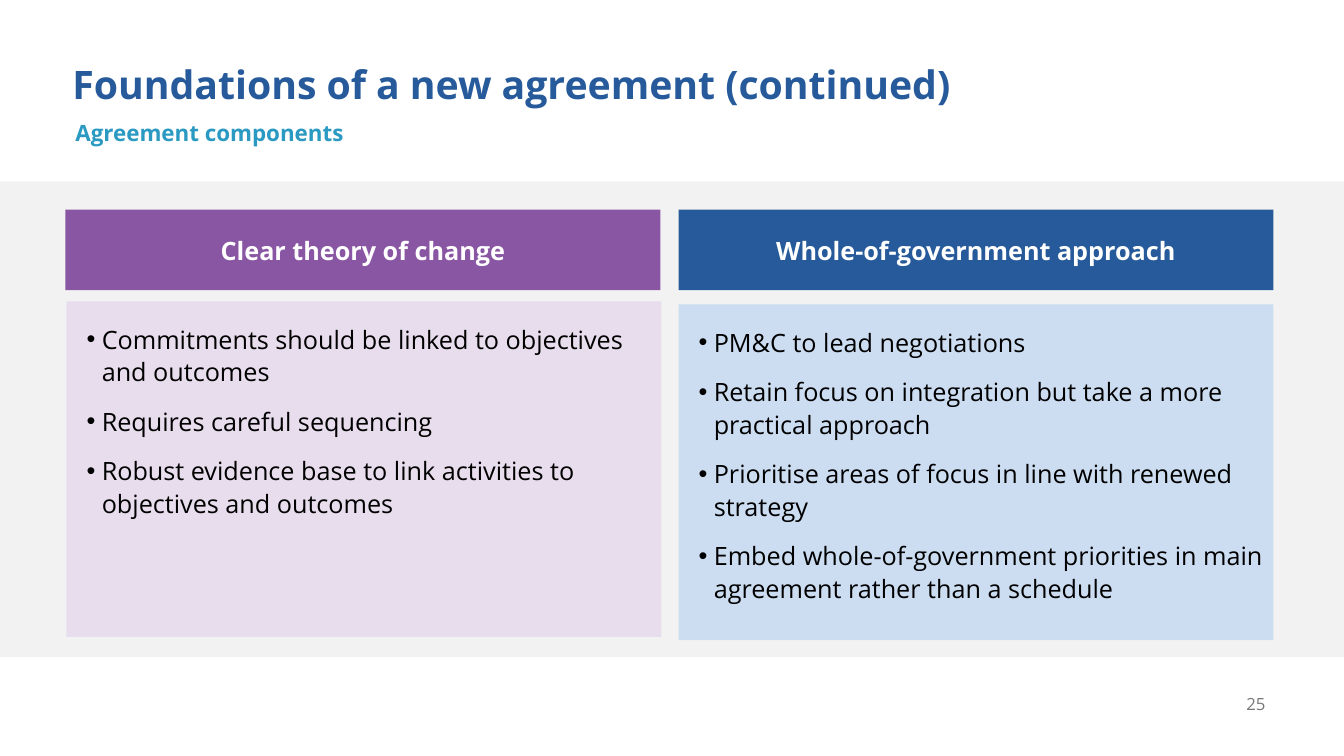
from dataclasses import dataclass

from lxml import etree
from pptx import Presentation
from pptx.dml.color import RGBColor
from pptx.enum.shapes import MSO_SHAPE
from pptx.enum.text import MSO_ANCHOR, PP_ALIGN
from pptx.oxml.ns import qn
from pptx.shapes.autoshape import Shape
from pptx.slide import Slide
from pptx.util import Pt

EMU_PER_PX = 9144  # 100 px to the inch
FONT = "Open Sans"
RECTANGLE = MSO_SHAPE.RECTANGLE
TOP, MIDDLE, BOTTOM = MSO_ANCHOR.TOP, MSO_ANCHOR.MIDDLE, MSO_ANCHOR.BOTTOM
LEFT, CENTER, RIGHT = PP_ALIGN.LEFT, PP_ALIGN.CENTER, PP_ALIGN.RIGHT

WHITE = RGBColor(0xFF, 0xFF, 0xFF)
BLACK = RGBColor(0x00, 0x00, 0x00)
LIGHT_GREY = RGBColor(0xF2, 0xF2, 0xF2)
GREY = RGBColor(0x79, 0x79, 0x79)
BLUE = RGBColor(0x26, 0x5A, 0x9A)
PALE_BLUE = RGBColor(0xCC, 0xDD, 0xF2)
PURPLE = RGBColor(0x89, 0x56, 0xA3)
PALE_PURPLE = RGBColor(0xE8, 0xDD, 0xED)
TEAL = RGBColor(0x2B, 0x9A, 0xC2)

SLIDE_WIDTH, SLIDE_HEIGHT = 1333, 750
COLUMN_WIDTH = 590
HEADER_TOP, HEADER_HEIGHT = 208, 80
BODY_HEIGHT = 333
BULLET_INDENT = 15


@dataclass(frozen=True)
class Box:
    left: int
    top: int
    width: int
    height: int

    def emu(self) -> tuple[int, int, int, int]:
        return px(self.left), px(self.top), px(self.width), px(self.height)


@dataclass(frozen=True)
class Label:
    text: str
    box: Box
    size: int
    color: RGBColor
    bold: bool = True
    align: PP_ALIGN = LEFT
    anchor: MSO_ANCHOR = TOP
    line_spacing: float = 1.0


@dataclass(frozen=True)
class Component:
    heading: str
    points: tuple[str, ...]
    header_left: int
    body_left: int
    body_top: int
    header_fill: RGBColor
    body_fill: RGBColor


LABELS = (
    Label("Foundations of a new agreement (continued)", Box(62, 56, 1212, 56),
          28, BLUE, anchor=BOTTOM, line_spacing=0.9),
    Label("Agreement components", Box(65, 116, 1212, 44), 16, TEAL, line_spacing=0.9),
    Label("25", Box(1189, 678, 76, 40), 12, GREY, bold=False, align=RIGHT, anchor=MIDDLE),
)

COMPONENTS = (
    Component(
        "Clear theory of change",
        (
            "Commitments should be linked to objectives and outcomes",
            "Requires careful sequencing",
            "Robust evidence base to link activities to objectives and outcomes",
        ),
        65, 66, 299, PURPLE, PALE_PURPLE,
    ),
    Component(
        "Whole-of-government approach",
        (
            "PM&C to lead negotiations",
            "Retain focus on integration but take a more practical approach",
            "Prioritise areas of focus in line with renewed strategy",
            "Embed whole-of-government priorities in main agreement rather than a schedule",
        ),
        673, 673, 302, BLUE, PALE_BLUE,
    ),
)


def px(length: int) -> int:
    return length * EMU_PER_PX


def add_panel(slide: Slide, box: Box, fill: RGBColor) -> Shape:
    panel = slide.shapes.add_shape(RECTANGLE, *box.emu())
    panel.shadow.inherit = False
    panel.fill.solid()
    panel.fill.fore_color.rgb = fill
    panel.line.fill.background()
    return panel


def write_label(shape: Shape, label: Label) -> None:
    frame = shape.text_frame
    frame.word_wrap = True
    frame.vertical_anchor = label.anchor
    frame.text = label.text
    paragraph = frame.paragraphs[0]
    paragraph.alignment = label.align
    paragraph.line_spacing = label.line_spacing
    style_font(paragraph.font, label.size, label.color, label.bold)


def style_font(font, size: int, color: RGBColor, bold: bool) -> None:
    font.name = FONT
    font.size = Pt(size)
    font.bold = bold
    font.color.rgb = color


def write_points(shape: Shape, points: tuple[str, ...]) -> None:
    frame = shape.text_frame
    frame.word_wrap = True
    frame.vertical_anchor = TOP
    frame.margin_left = frame.margin_top = px(20)
    frame.margin_right, frame.margin_bottom = px(10), px(5)
    frame.text = "\n".join(points)
    for paragraph in frame.paragraphs:
        paragraph.alignment = LEFT
        paragraph.line_spacing = 1.08
        paragraph.space_after = Pt(12)
        properties = paragraph._p.get_or_add_pPr()
        properties.set("marL", str(px(BULLET_INDENT)))
        properties.set("indent", str(-px(BULLET_INDENT)))
        etree.SubElement(properties, qn("a:buFont")).set("typeface", "Arial")
        etree.SubElement(properties, qn("a:buChar")).set("char", "•")
        style_font(paragraph.font, 18, BLACK, False)


def add_component(slide: Slide, component: Component) -> None:
    header_box = Box(component.header_left, HEADER_TOP, COLUMN_WIDTH, HEADER_HEIGHT)
    header = add_panel(slide, header_box, component.header_fill)
    write_label(header, Label(component.heading, header_box, 18, WHITE,
                              align=CENTER, anchor=MIDDLE))
    body_box = Box(component.body_left, component.body_top, COLUMN_WIDTH, BODY_HEIGHT)
    write_points(add_panel(slide, body_box, component.body_fill), component.points)


def main() -> None:
    presentation = Presentation()
    presentation.slide_width = px(SLIDE_WIDTH)
    presentation.slide_height = px(SLIDE_HEIGHT)
    slide = presentation.slides.add_slide(presentation.slide_layouts[6])

    add_panel(slide, Box(0, 180, SLIDE_WIDTH, 472), LIGHT_GREY)
    for label in LABELS:
        write_label(slide.shapes.add_textbox(*label.box.emu()), label)
    for component in COMPONENTS:
        add_component(slide, component)

    presentation.save("out.pptx")


if __name__ == "__main__":
    main()
